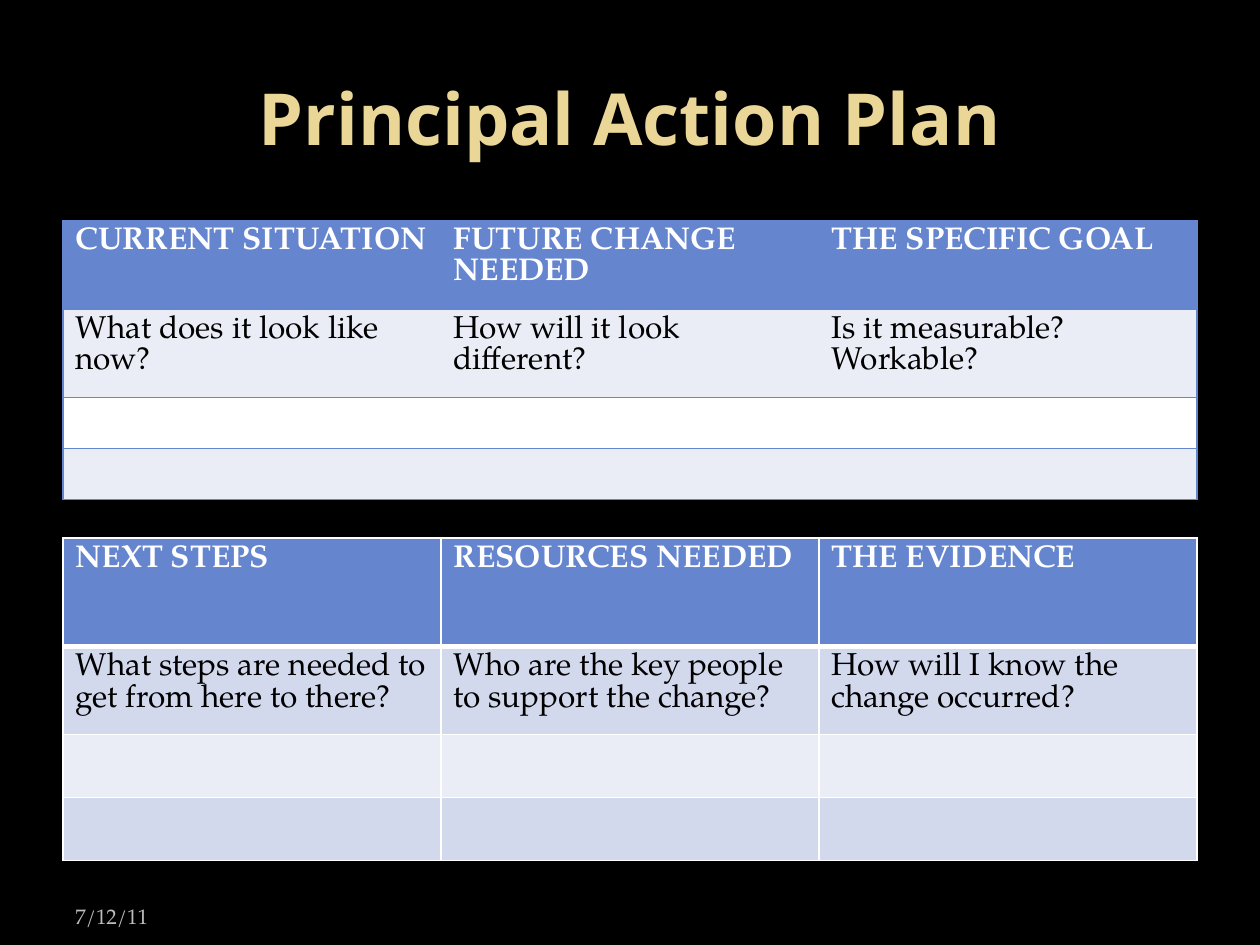
import pptx
import pptx.dml.color
import pptx.enum.text
import pptx.oxml.ns
import pptx.util
from lxml import etree

Cm = pptx.util.Cm
Pt = pptx.util.Pt
ANCHOR = pptx.enum.text.MSO_ANCHOR
ALIGN = pptx.enum.text.PP_ALIGN
SERIF = "TeX Gyre Pagella"
COLORS = {
    "night": "000000",
    "gold": "EAD696",
    "grey": "BDBDBD",
    "white": "FFFFFF",
    "blue": "6585CF",
    "pale": "EAEDF6",
    "lilac": "D3D9ED",
}
FORMATS = {
    "title": {"name": "Noto Sans", "size": Pt(41), "bold": True, "color": "gold"},
    "date": {"name": SERIF, "size": Pt(12), "bold": False, "color": "grey"},
    "heading": {"name": SERIF, "size": Pt(18), "bold": True, "color": "white"},
    "question": {"name": SERIF, "size": Pt(18), "bold": False, "color": "night"},
}
SITUATION = [
    ["CURRENT SITUATION", "FUTURE CHANGE NEEDED", "THE SPECIFIC GOAL"],
    ["What does it look like now?", "How will it look different?", "Is it measurable? Workable?"],
]
STEPS = [
    ["NEXT STEPS", "RESOURCES NEEDED", "THE EVIDENCE"],
    [
        "What steps are needed to get from here to there?",
        "Who are the key people to support the change?",
        "How will I know the change occurred?",
    ],
]


def rgb(color):
    """Return the named colour."""
    return pptx.dml.color.RGBColor.from_string(COLORS[color])


def write(paragraph, text, style):
    """Add a run of text in one of the named formats."""
    run = paragraph.add_run()
    run.text = text
    for attribute, value in FORMATS[style].items():
        if attribute == "color":
            run.font.color.rgb = rgb(value)
        else:
            setattr(run.font, attribute, value)


def add_label(slide, box, text, style, anchor, align):
    """Add a wrapped text box."""
    frame = slide.shapes.add_textbox(*map(Cm, box)).text_frame
    for attribute, value in {"word_wrap": True, "vertical_anchor": anchor}.items():
        setattr(frame, attribute, value)
    frame.paragraphs[0].alignment = align
    write(frame.paragraphs[0], text, style)


def set_border(cell, side, color, points):
    """Draw one side of a cell, or clear it when the width is zero."""
    qn = pptx.oxml.ns.qn
    line = etree.SubElement(cell._tc.get_or_add_tcPr(), qn(f"a:ln{side}"), w=str(Pt(points)))
    if points:
        fill = etree.SubElement(line, qn("a:solidFill"))
        etree.SubElement(fill, qn("a:srgbClr"), val=COLORS[color])
    else:
        etree.SubElement(line, qn("a:noFill"))


def open_borders(row, column):
    """Give widths for a table ruled across, with closed outer sides."""
    return {"L": int(column == 0), "R": int(column == 2), "T": 1, "B": 1}


def grid_borders(row, column):
    """Give widths for a full grid with a heavy rule below the headings."""
    return {"L": 1, "R": 1, "T": 3 if row == 1 else 1, "B": 3 if row == 0 else 1}


def add_plan(slide, top, heights, texts, fills, line_color, borders):
    """Add a three-column plan table with blank rows below its questions."""
    plan = slide.shapes.add_table(
        len(heights), 3, Cm(1.27), Cm(top), Cm(22.86), Cm(sum(heights))
    ).table
    for row, height in enumerate(heights):
        plan.rows[row].height = Cm(height)
        style = "question" if row else "heading"
        for column in range(3):
            cell = plan.cell(row, column)
            for side, points in borders(row, column).items():
                set_border(cell, side, line_color, points)
            cell.fill.solid()
            cell.fill.fore_color.rgb = rgb(fills[row])
            if row < len(texts):
                write(cell.text_frame.paragraphs[0], texts[row][column], style)


def main():
    """Build and save the action plan slide."""
    deck = pptx.Presentation()
    deck.slide_width, deck.slide_height = Cm(25.4), Cm(19.05)
    slide = deck.slides.add_slide(deck.slide_layouts[6])
    slide.background.fill.solid()
    slide.background.fill.fore_color.rgb = rgb("night")
    add_label(slide, (1.27, 0.76, 22.86, 3.18), "Principal Action Plan", "title",
              ANCHOR.MIDDLE, ALIGN.CENTER)
    add_label(slide, (1.27, 17.83, 5.92, 1.02), "7/12/11", "date", ANCHOR.BOTTOM, ALIGN.LEFT)
    add_plan(slide, 4.45, [1.03] * 4, SITUATION,
             ["blue", "pale", "white", "pale"], "blue", open_borders)
    add_plan(slide, 10.85, [2.18] + [1.27] * 3, STEPS,
             ["blue", "lilac", "pale", "lilac"], "white", grid_borders)
    deck.save("out.pptx")


if __name__ == "__main__":
    main()
